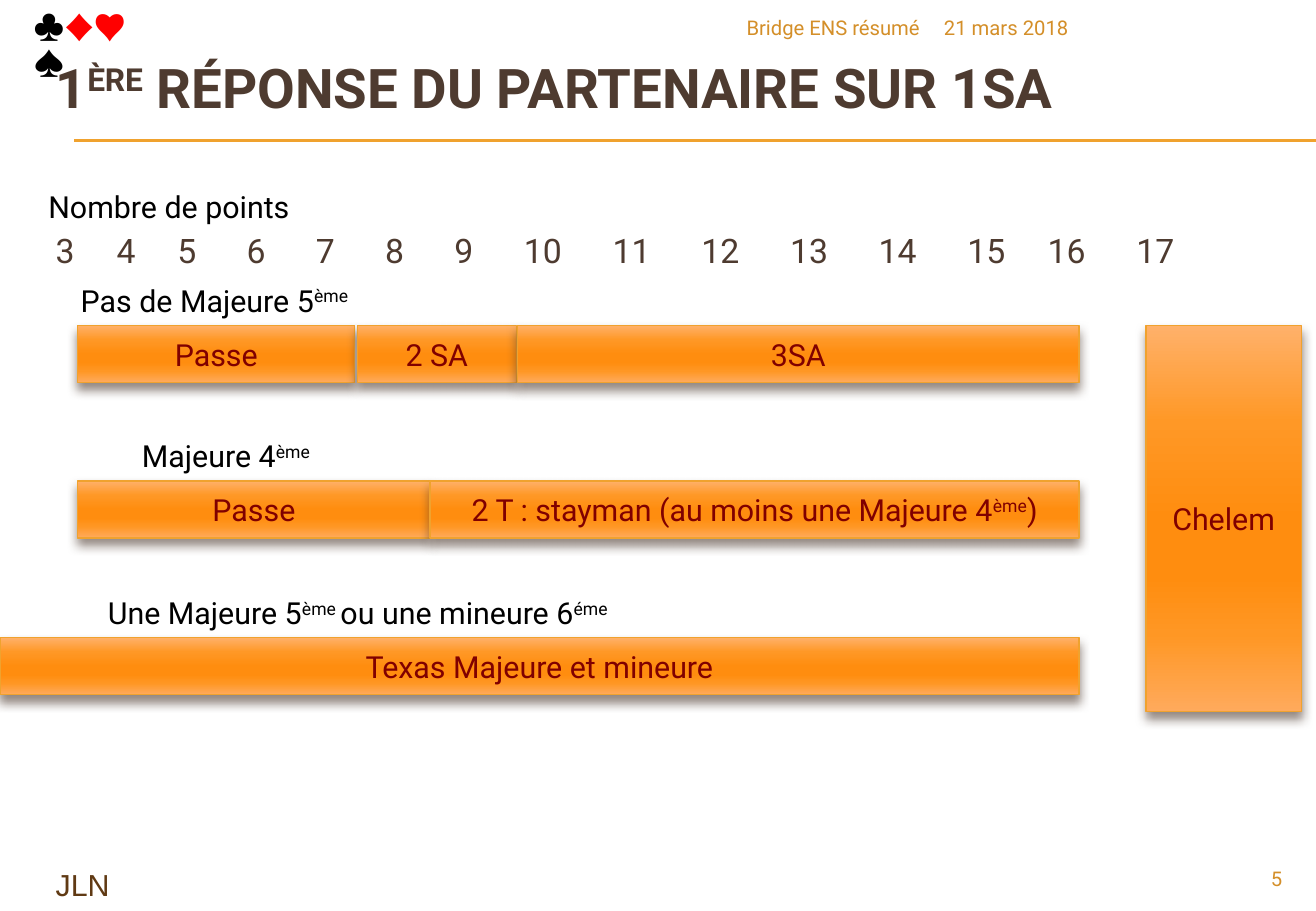
from itertools import accumulate
from lxml import etree
from pptx import Presentation
from pptx.dml.color import RGBColor as RGB
from pptx.enum.shapes import MSO_CONNECTOR as CONN, MSO_SHAPE as SHAPE
from pptx.enum.text import MSO_ANCHOR as ANCHOR, MSO_AUTO_SIZE as FIT, PP_ALIGN as ALIGN
from pptx.oxml.ns import qn
from pptx.util import Inches, Pt

BLACK = RGB(0, 0, 0)
RED = RGB(0xFF, 0, 0)
BROWN = RGB(0x4E, 0x3B, 0x30)
GOLD = RGB(0xF0, 0xA2, 0x2E)
OCHRE = RGB(0xD4, 0x8F, 0x29)
UMBER = RGB(0x60, 0x3A, 0x14)
MAROON = RGB(0x80, 0, 0)
BLEND = [
    (0, RGB(0xFF, 0xB1, 0x6A)), (25, RGB(0xFF, 0x98, 0x26)),
    (50, RGB(0xFF, 0x8D, 0x0F)), (65, RGB(0xFF, 0x8D, 0x0F)),
    (80, RGB(0xFF, 0x97, 0x24)), (100, RGB(0xFF, 0xAA, 0x5C)),
]
LABEL = {"name": "Roboto", "size": Pt(18)}
SMALL = {"name": "Roboto", "size": Pt(12)}
SUIT = {"name": "Roboto", "size": Pt(18), "bold": True}
POINT = {"name": "Roboto", "size": Pt(20)}
HEAD = {"name": "Roboto", "size": Pt(32.4), "bold": True}
SIGN = {"name": "Arial", "size": Pt(18)}


def style(item, values):
    for name, value in values.items():
        setattr(item, name, value)


def add_run(para, text, font, color):
    """Add text; the parts between carets are superscript."""
    for i, part in enumerate(text.split("^")):
        if part:
            run = para.add_run()
            run.text = part
            style(run.font, font)
            run.font.color.rgb = color
            if i % 2:
                run._r.get_or_add_rPr().set("baseline", "30000")


def place(item, box):
    names = ("left", "top", "width", "height")
    style(item, dict(zip(names, map(Inches, box))))


def add_text(slide, box, text, font, color, align=ALIGN.LEFT, wrap=True):
    frame = slide.shapes.add_textbox(*map(Inches, box)).text_frame
    frame.word_wrap = wrap
    para = frame.paragraphs[0]
    para.alignment = align
    add_run(para, text, font, color)
    return frame


def add_sub(parent, tag, **values):
    return etree.SubElement(parent, qn(tag), values)


def add_bar(slide, box, text):
    bar = slide.shapes.add_shape(SHAPE.RECTANGLE, *map(Inches, box))
    bar.line.color.rgb = GOLD
    bar.line.width = Pt(0.79)
    bar.shadow.inherit = False
    props = bar._element.spPr

    # Vertical blend
    grad = etree.Element(qn("a:gradFill"), rotWithShape="1")
    stops = add_sub(grad, "a:gsLst")
    for pos, color in BLEND:
        stop = add_sub(stops, "a:gs", pos=str(pos * 1000))
        add_sub(stop, "a:srgbClr", val=str(color))
    add_sub(grad, "a:lin", ang="5400000", scaled="0")
    props.find(qn("a:ln")).addprevious(grad)

    # Soft shadow below
    shade = add_sub(props.find(qn("a:effectLst")), "a:outerShdw",
                    blurRad=str(Pt(6)), dist=str(Pt(4)), dir="5400000",
                    rotWithShape="0")
    tint = add_sub(shade, "a:srgbClr", val=str(BROWN))
    add_sub(tint, "a:alpha", val="60000")

    frame = bar.text_frame
    style(frame, {"word_wrap": True, "vertical_anchor": ANCHOR.MIDDLE})
    frame.paragraphs[0].alignment = ALIGN.CENTER
    add_run(frame.paragraphs[0], text, LABEL, MAROON)


def add_header(slide, box):
    x, y, w, h = box
    # Double rule
    for rule in (1.15, 1.16):
        line = slide.shapes.add_connector(
            CONN.STRAIGHT, *map(Inches, (x + 0.61, y + rule, x + w, y + rule)))
        line.line.color.rgb = GOLD
        line.line.width = Pt(0.75)
        add_sub(line._element.spPr, "a:effectLst")

    # Card suits
    suits = add_text(slide, (x + 0.18, y, 0.96, 0.4), "♣", SUIT, BLACK)
    add_run(suits.paragraphs[0], "♦♥", SUIT, RED)
    add_run(suits.paragraphs[0], "♠", SUIT, BLACK)

    # Title
    title = slide.shapes.title
    place(title, (x + 0.36, y + 0.5, 10.29, h - 0.5))
    frame = title.text_frame
    style(frame, {"word_wrap": True, "auto_size": FIT.NONE,
                  "vertical_anchor": ANCHOR.MIDDLE,
                  "margin_top": Inches(0.05), "margin_bottom": Inches(0.55)})
    frame.paragraphs[0].alignment = ALIGN.LEFT
    add_run(frame.paragraphs[0], "1^ÈRE^ RÉPONSE DU PARTENAIRE SUR 1SA",
            HEAD, BROWN)

    # Talk and date
    add_text(slide, (x + 4.24, y + 0.08, 3.43, 0.32), "Bridge ENS résumé",
             SMALL, OCHRE, ALIGN.RIGHT)
    add_text(slide, (x + 7.67, y + 0.08, 2.98, 0.32), "21 mars 2018",
             SMALL, OCHRE)


def add_scale(slide, box):
    x, y, w, h = box
    add_text(slide, (x - 0.06, y - 0.2, 2.3, 0.4), "Nombre de points",
             LABEL, BLACK)
    marks = "\t".join(str(n) for n in range(3, 18))
    frame = add_text(slide, box, marks, POINT, BROWN)
    frame.margin_top = Inches(0.19)
    # Centred tab stops, one for each mark after the first
    gaps = [0.58, 0.5] + [0.57] * 4 + [0.65] + [0.73] * 5 + [0.66, 0.73]
    tabs = add_sub(frame.paragraphs[0]._p.get_or_add_pPr(), "a:tabLst")
    for pos in accumulate(gaps):
        add_sub(tabs, "a:tab", pos=str(Inches(pos)), algn="ctr")


def add_bids(slide, box):
    x, y, w, h = box
    # Row top, label box, label, bars as (left, width, text)
    rows = [
        (0, (0.1, 3.33), "Pas de Majeure 5^ème",
         [(0.64, 2.28, "Passe"), (2.94, 1.31, "2 SA"), (4.26, 4.62, "3SA")]),
        (1.28, (1.06, 1.6), "Majeure 4^ème",
         [(0.64, 2.9, "Passe"),
          (3.54, 5.34, "2 T : stayman (au moins une Majeure 4^ème^)")]),
        (2.57, (0.22, 5.45), "Une Majeure 5^ème ^ou une mineure 6^éme",
         [(0, 8.88, "Texas Majeure et mineure")]),
    ]
    for top, (left, wide), label, bars in rows:
        for start, span, text in bars:
            add_bar(slide, (x + start, y + top, span, 0.47), text)
        add_text(slide, (x + left, y + top - 0.41, wide, 0.4), label,
                 LABEL, BLACK, ALIGN.CENTER)
    # Slam block beside all rows
    add_bar(slide, (x + w - 1.28, y, 1.28, h), "Chelem")


def add_footer(slide, box):
    x, y, w, h = box
    add_text(slide, (x, y, 0.81, h), "JLN", SIGN, UMBER, wrap=False)
    add_text(slide, (x + w - 0.9, y, 0.9, 0.27), "5", SMALL, OCHRE, ALIGN.RIGHT)


def main():
    deck = Presentation()
    style(deck, {"slide_width": Inches(10.83), "slide_height": Inches(7.5)})
    slide = deck.slides.add_slide(deck.slide_layouts[5])
    add_header(slide, (0, 0, 10.83, 1.42))
    add_scale(slide, (0.36, 1.7, 10.47, 0.6))
    add_bids(slide, (0, 2.68, 10.71, 3.18))
    add_footer(slide, (0.36, 7.08, 10.29, 0.4))
    deck.save("out.pptx")


if __name__ == "__main__":
    main()
